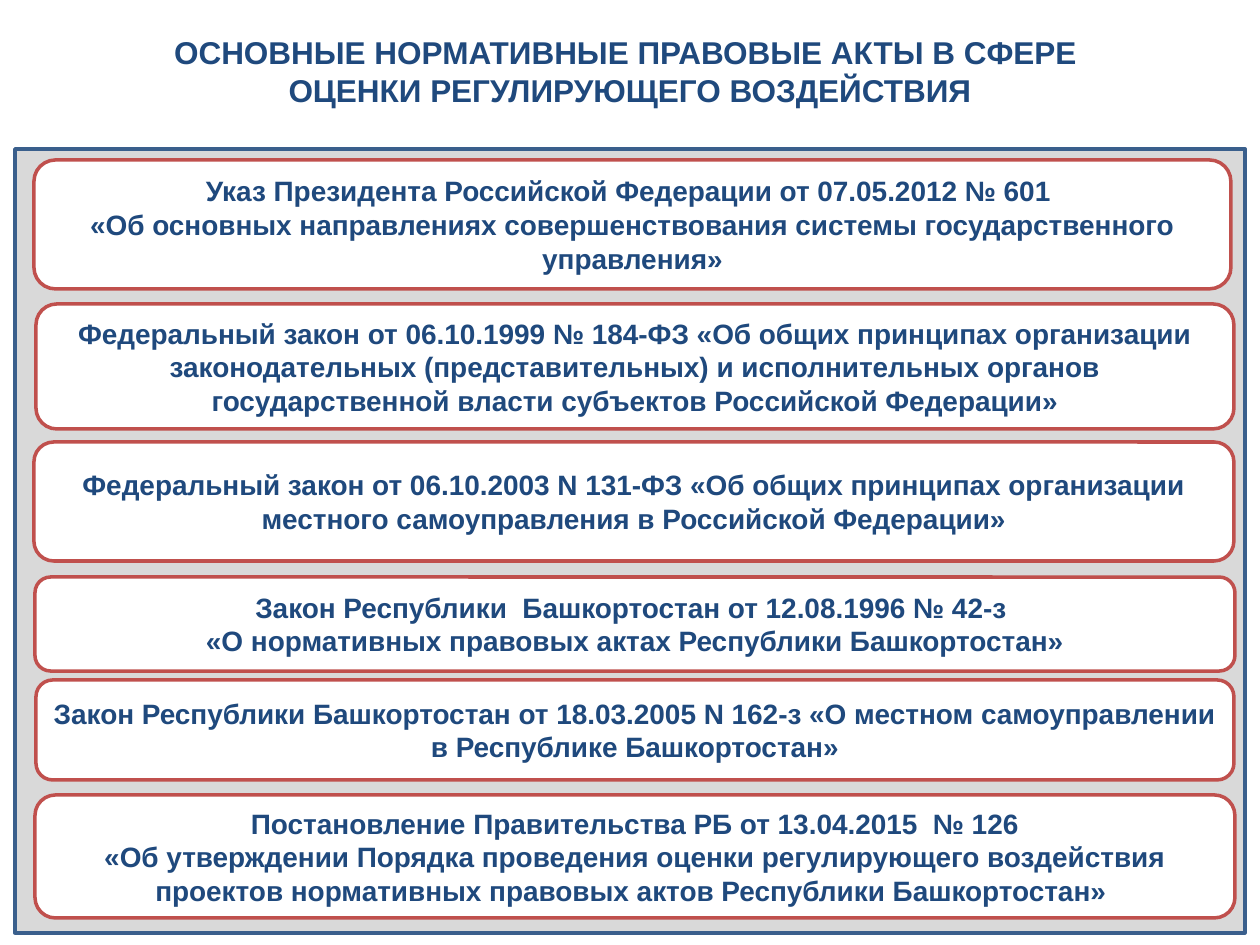
"""Build a slide listing the main legal acts on regulatory impact assessment."""
from pptx import Presentation
from pptx.dml.color import RGBColor
from pptx.enum.shapes import MSO_SHAPE as Shape
from pptx.enum.text import MSO_ANCHOR as Anchor, PP_ALIGN as Align
from pptx.util import Pt

SCALE = 914400 / 126
COLORS = {
    "text": "1F497D",
    "panel": "D9D9D9",
    "panel_line": "3A5F8C",
    "card": "FFFFFF",
    "card_line": "C0504D",
}
TITLE = [
    "ОСНОВНЫЕ НОРМАТИВНЫЕ ПРАВОВЫЕ АКТЫ В СФЕРЕ ",
    "ОЦЕНКИ РЕГУЛИРУЮЩЕГО ВОЗДЕЙСТВИЯ",
]
ACTS = [
    ((34, 160, 1197, 129), [
        "Указ Президента Российской Федерации от 07.05.2012 № 601 ",
        "«Об основных направлениях совершенствования системы государственного управления»",
    ]),
    ((36, 304, 1198, 125), [
        "Федеральный закон от 06.10.1999 № 184-ФЗ «Об общих принципах организации "
        "законодательных (представительных) и исполнительных органов "
        "государственной власти субъектов Российской Федерации»",
    ]),
    ((34, 442, 1200, 119), [
        "Федеральный закон от 06.10.2003 N 131-ФЗ «Об общих принципах организации "
        "местного самоуправления в Российской Федерации»",
    ]),
    ((35, 577, 1200, 94), [
        "Закон Республики  Башкортостан от 12.08.1996 № 42-з ",
        "«О нормативных правовых актах Республики Башкортостан»",
    ]),
    ((36, 680, 1198, 100), [
        "Закон Республики Башкортостан от 18.03.2005 N 162-з «О местном самоуправлении "
        "в Республике Башкортостан»",
    ]),
    ((35, 795, 1200, 123), [
        "Постановление Правительства РБ от 13.04.2015  № 126",
        "«Об утверждении Порядка проведения оценки регулирующего воздействия "
        "проектов нормативных правовых актов Республики Башкортостан» ",
    ]),
]


def write(box, lines, size):
    frame = box.text_frame
    frame.word_wrap = True
    frame.text = "\n".join(lines)
    for para in frame.paragraphs:
        para.alignment = Align.CENTER
        for span in para.runs:
            span.font.name = "Arial"
            span.font.size = Pt(size)
            span.font.bold = True
            span.font.color.rgb = RGBColor.from_string(COLORS["text"])


def add_block(page, kind, place, name):
    block = page.shapes.add_shape(kind, *[round(n * SCALE) for n in place])
    block.shadow.inherit = False
    block.fill.solid()
    block.fill.fore_color.rgb = RGBColor.from_string(COLORS[name])
    block.line.color.rgb = RGBColor.from_string(COLORS[name + "_line"])
    block.line.width = Pt(2)
    return block


deck = Presentation()
deck.slide_width = round(1260 * SCALE)
deck.slide_height = round(945 * SCALE)
page = deck.slides.add_slide(deck.slide_layouts[6])

title = page.shapes.add_textbox(*[round(n * SCALE) for n in (0, 27, 1260, 89)])
title.text_frame.margin_left = title.text_frame.margin_right = round(10 * SCALE)
write(title, TITLE, 18)

add_block(page, Shape.RECTANGLE, (15, 149, 1230, 784), "panel")

for place, lines in ACTS:
    card = add_block(page, Shape.ROUNDED_RECTANGLE, place, "card")
    card.text_frame.vertical_anchor = Anchor.MIDDLE
    write(card, lines, 16)

deck.save("out.pptx")
